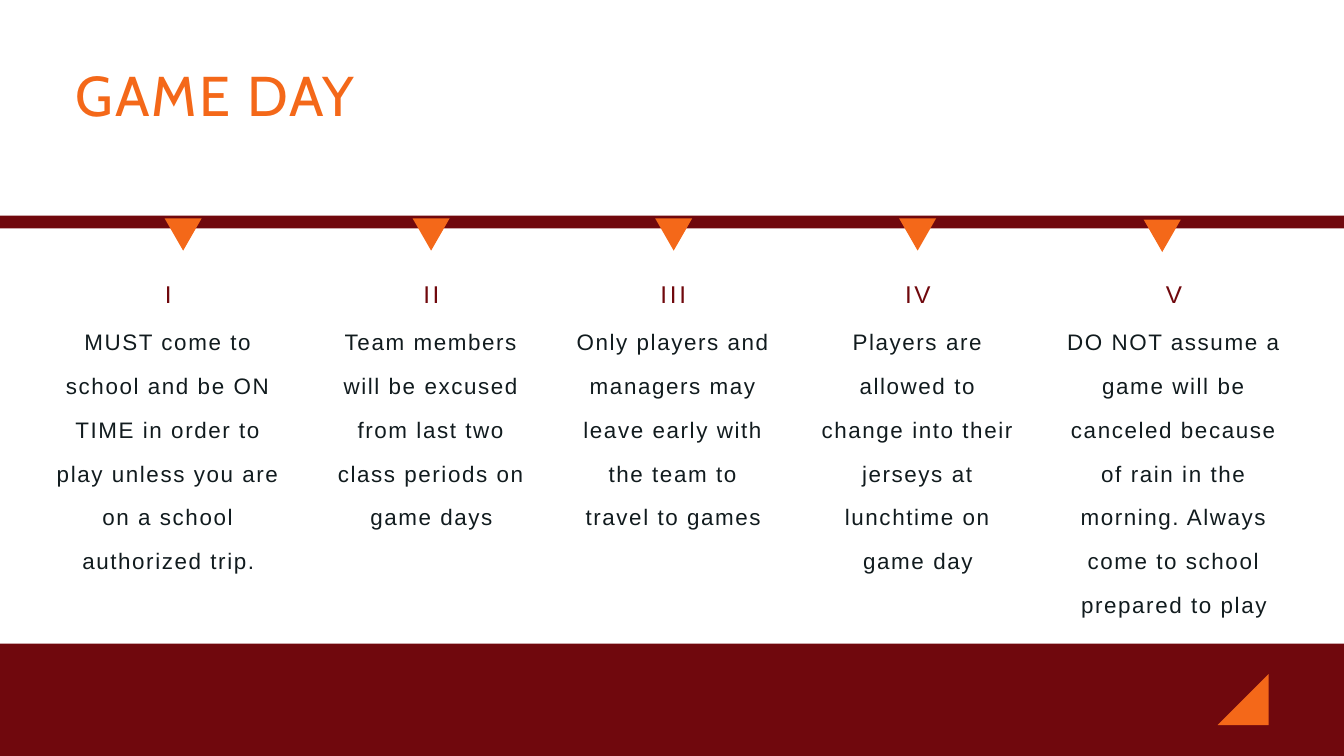
from pptx import Presentation
from pptx.dml.color import RGBColor
from pptx.enum import shapes, text
from pptx.util import Inches, Pt

COLORS = {"maroon": "70080D", "orange": "F46819", "ink": "111B1E"}
TITLE = "GAME DAY"
# numeral, rule, left, width, lines of text, marker left, marker top
STEPS = [
    ("I", "MUST come to school and be ON TIME in order to play unless you "
     "are on a school authorized trip.", 0.8, 3.41, 6, 2.45, 3.25),
    ("II", "Team members will be excused from last two class periods on "
     "game days", 4.94, 2.96, 5, 6.14, 3.25),
    ("III", "Only players and managers may leave early with the team to "
     "travel to games", 8.54, 2.96, 5, 9.75, 3.25),
    ("IV", "Players are allowed to change into their jerseys at lunchtime "
     "on game day", 12.18, 2.96, 6, 13.38, 3.25),
    ("V", "DO NOT assume a game will be canceled because of rain in the "
     "morning. Always come to school prepared to play",
     15.82, 3.3, 7, 17.02, 3.27),
]
HEAD = dict(size=26, color="maroon", gap=2.9, line=42.9)
BODY = dict(size=24, color="ink", gap=1.7, line=47)

prs = Presentation()
prs.slide_width, prs.slide_height = Inches(20), Inches(11.25)
slide = prs.slides.add_slide(prs.slide_layouts[6])


def draw(kind, box, color, turn=0):
    shape = slide.shapes.add_shape(kind, *map(Inches, box))
    shape.shadow.inherit = False
    shape.fill.solid()
    shape.fill.fore_color.rgb = RGBColor.from_string(COLORS[color])
    shape.line.fill.background()
    shape.rotation = turn


def write(words, box, size, color, gap, line, font="Arial",
          align=text.PP_ALIGN.CENTER):
    """Add a text box; gap is letter spacing and line the pitch, in points."""
    frame = slide.shapes.add_textbox(*map(Inches, box)).text_frame
    frame.word_wrap = True
    frame.auto_size = text.MSO_AUTO_SIZE.SHAPE_TO_FIT_TEXT
    frame.margin_left = frame.margin_right = 0
    frame.margin_top = frame.margin_bottom = 0
    para = frame.paragraphs[0]
    para.alignment = align
    para.line_spacing = Pt(line)
    run = para.add_run()
    run.text = words
    run.font.name = font
    run.font.size = Pt(size)
    run.font.color.rgb = RGBColor.from_string(COLORS[color])
    run.font._element.set("spc", str(round(gap * 100)))


kinds = shapes.MSO_SHAPE
draw(kinds.RECTANGLE, (-0.63, 3.21, 21.26, 0.19), "maroon")
for step in STEPS:
    draw(kinds.ISOSCELES_TRIANGLE, (*step[5:], 0.55, 0.48), "orange", 180)
write(TITLE, (1.12, 0.9, 14.46, 1), size=60, color="orange", gap=2.4,
      line=72, font="Cabin", align=text.PP_ALIGN.LEFT)
draw(kinds.RECTANGLE, (-0.29, 9.58, 21.3, 2.13), "maroon")
draw(kinds.RIGHT_TRIANGLE, (18.12, 10.03, 0.76, 0.76), "orange", 270)

for numeral, rule, left, width, lines, *_ in STEPS:
    write(numeral, (left, 4, width, 0.53), **HEAD)
    tall = lines * BODY["line"] / 72 - 0.14
    write(rule, (left, 4.63, width, tall), **BODY)

prs.save("out.pptx")
